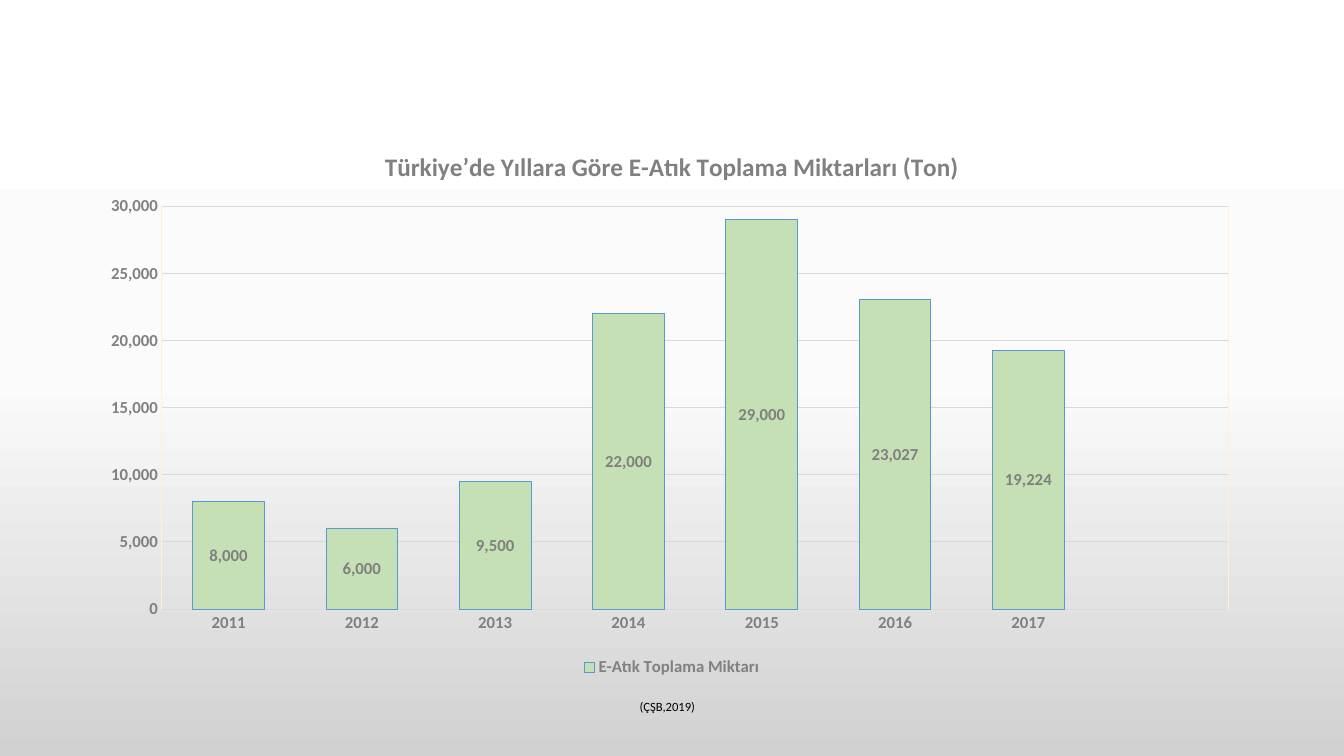
import copy
from lxml import etree
from pptx import Presentation
from pptx import util as u
from pptx.chart.data import CategoryChartData
from pptx.dml.color import RGBColor
from pptx.enum import chart as ch, text
from pptx.oxml import parse_xml
from pptx.oxml.ns import nsdecls, qn

COLORS = {
    "top": "FFFFFF", "middle": "FBFBFB", "bottom": "D1D1D1",
    "label": "808080", "grid": "D9D9D9", "bar": "C5E0B4",
    "bar_line": "5998D0", "frame": "FFF2CC", "black": "000000",
}


def color(name):
    return RGBColor.from_string(COLORS[name])


def style_font(font, size, name="label", bold=True):
    font.name = "Calibri"
    font.size = u.Pt(size)
    font.bold = bold
    font.color.rgb = color(name)


prs = Presentation()
prs.slide_width = u.Pt(960)
prs.slide_height = u.Pt(540)
s = prs.slides.add_slide(prs.slide_layouts[6])

fill = s.background.fill
fill.gradient()
fill.gradient_angle = 270
stops = fill.gradient_stops[0]._gs.getparent()
stops.append(copy.deepcopy(stops[0]))
for stop, position, name in zip(fill.gradient_stops, (0, 0.5, 1), ("top", "middle", "bottom")):
    stop.position = position
    stop.color.rgb = color(name)

data = CategoryChartData(number_format="#,##0")
data.categories = ["2011", "2012", "2013", "2014", "2015", "2016", "2017", ""]
data.add_series("E-Atık Toplama Miktarı", [8000, 6000, 9500, 22000, 29000, 23027, 19224, None])
chart = s.shapes.add_chart(
    ch.XL_CHART_TYPE.COLUMN_STACKED, u.Pt(66), u.Pt(92), u.Pt(828), u.Pt(394.5), data
).chart
style_font(chart.font, 10, "black", False)

chart.has_title = True
p = chart.chart_title.text_frame.paragraphs[0]
r = p.add_run()
r.text = "Türkiye’de Yıllara Göre E-Atık Toplama Miktarları (Ton)"
style_font(r.font, 18)
chart.chart_title.include_in_layout = False

chart.has_legend = True
chart.legend.position = ch.XL_LEGEND_POSITION.BOTTOM
chart.legend.include_in_layout = False
style_font(chart.legend.font, 12)

for axis in (chart.category_axis, chart.value_axis):
    axis.major_tick_mark = axis.minor_tick_mark = ch.XL_TICK_MARK.NONE
    axis.format.line.fill.background()
    style_font(axis.tick_labels.font, 12)

axis = chart.value_axis
axis.minimum_scale = 0
axis.maximum_scale = 30000
axis.major_unit = 5000
axis.tick_labels.number_format = "#,##0"
axis.tick_labels.number_format_is_linked = False
axis.major_gridlines.format.line.color.rgb = color("grid")
axis.major_gridlines.format.line.width = u.Pt(0.75)

plot = chart.plots[0]
plot.gap_width = 86
plot.overlap = 100
plot.vary_by_categories = False
bars = plot.series[0]
bars.format.fill.solid()
bars.format.fill.fore_color.rgb = color("bar")
bars.format.line.color.rgb = color("bar_line")
bars.format.line.width = u.Pt(0.75)
labels = bars.data_labels
labels.show_value = True
labels.position = ch.XL_LABEL_POSITION.CENTER
labels.number_format = "#,##0"
labels.number_format_is_linked = False
style_font(labels.font, 12)

plot_area = plot._element.getparent()
for old in plot_area.findall(qn("c:layout")):
    plot_area.remove(old)
layout = parse_xml(f"<c:layout {nsdecls('c')}><c:manualLayout/></c:layout>")
for tag, value in (
    ("layoutTarget", "inner"), ("xMode", "edge"), ("yMode", "edge"),
    ("x", "0.06"), ("y", "0.14"), ("w", "0.92"), ("h", "0.73"),
):
    etree.SubElement(layout[0], qn(f"c:{tag}")).set("val", value)
plot_area.insert(0, layout)
plot_area.append(parse_xml(
    f'<c:spPr {nsdecls("c", "a")}><a:noFill/><a:ln w="9525"><a:solidFill>'
    f'<a:srgbClr val="{COLORS["frame"]}"/></a:solidFill></a:ln></c:spPr>'
))

sp = s.shapes.add_textbox(u.Pt(334.8), u.Pt(496), u.Pt(283.7), u.Pt(28.8))
tf = sp.text_frame
tf.word_wrap = True
tf.auto_size = text.MSO_AUTO_SIZE.SHAPE_TO_FIT_TEXT
p = tf.paragraphs[0]
p.alignment = text.PP_ALIGN.CENTER
r = p.add_run()
r.text = "(ÇŞB,2019)"
style_font(r.font, 9, "black", False)

prs.save("out.pptx")
